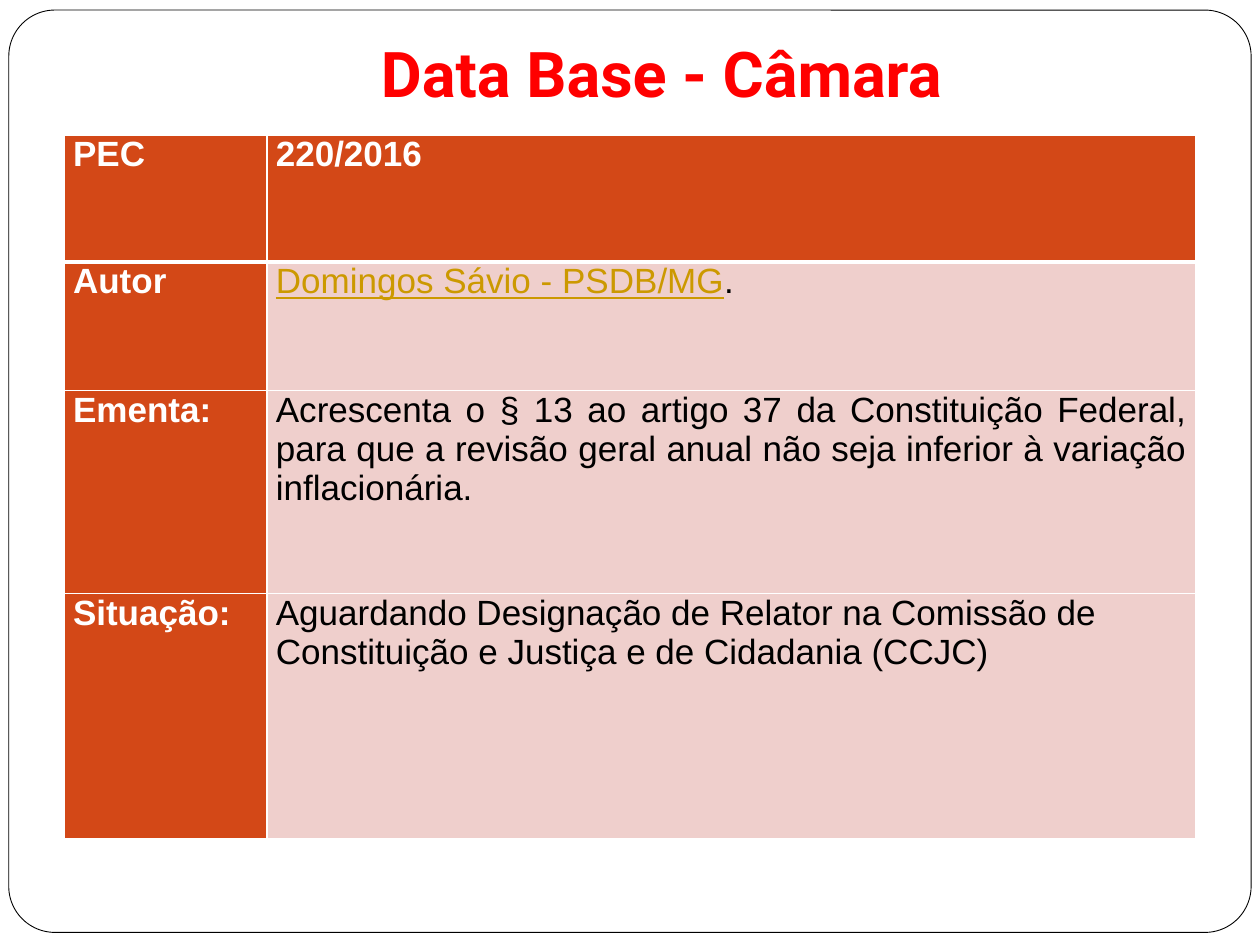
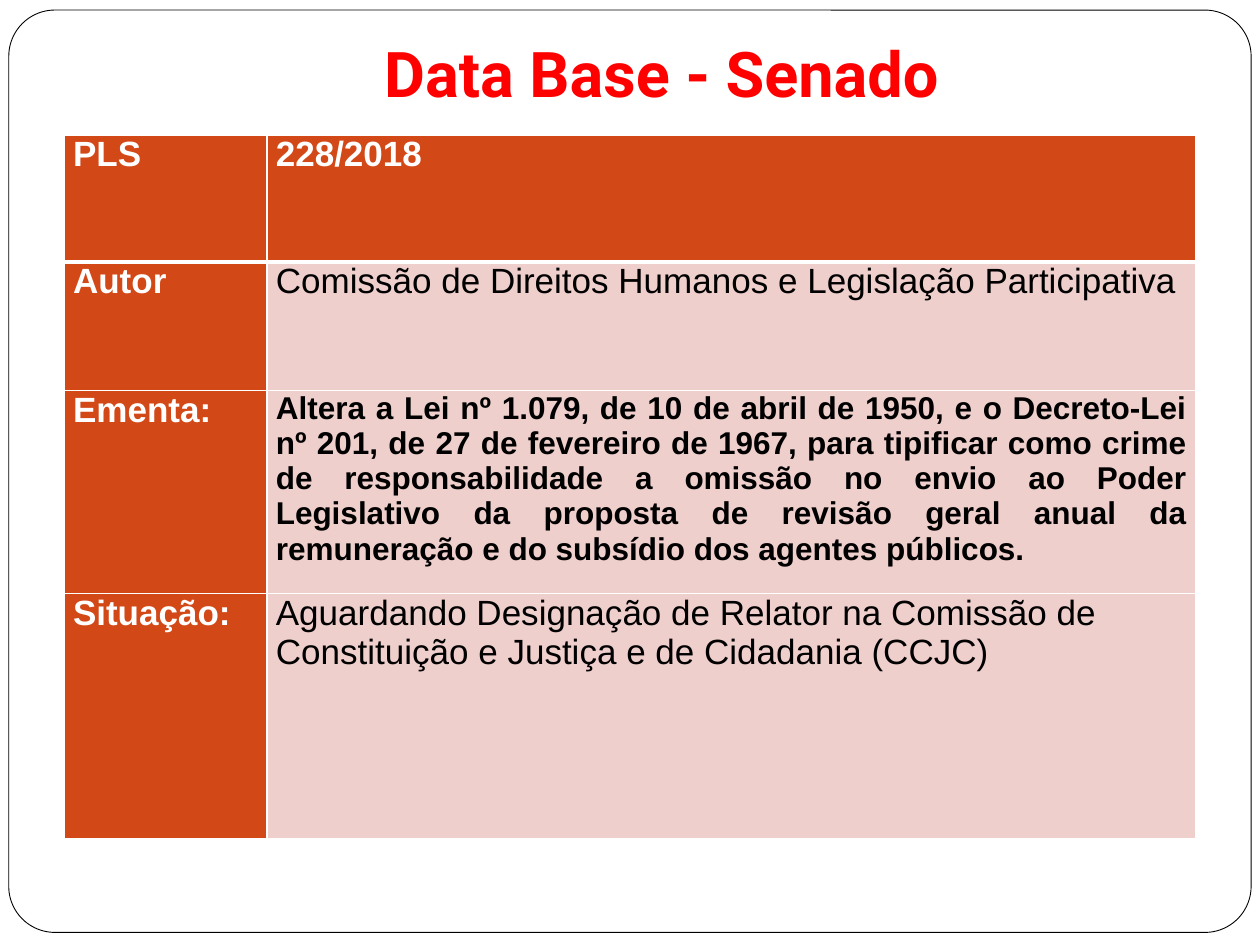
from lxml import etree
from pptx import Presentation
from pptx.dml.color import RGBColor
from pptx.enum.shapes import MSO_SHAPE as Shape
from pptx.enum.text import MSO_ANCHOR as Anchor, PP_ALIGN as Align
from pptx.oxml.ns import qn
from pptx.util import Inches, Pt

COLORS = {
    "white": "FFFFFF",
    "black": "000000",
    "title": "FF0000",
    "label": "D34817",
    "value": "EFCFCC",
    "author": "CC9900",
}
COLUMN_WIDTHS = [1.61, 7.37]
ROW_HEIGHTS = [1.01, 1.02, 1.61, 1.95]
STATUS = ("Aguardando Designação de Relator na Comissão de "
          "Constituição e Justiça e de Cidadania (CCJC)")

# The author is a list of runs; an underlined run takes the author colour.
BILLS = [
    {
        "title": "Data Base - Câmara",
        "kind": "PEC",
        "number": "220/2016",
        "author": [("Domingos Sávio - PSDB/MG", True), (".", False)],
        "summary": "Acrescenta o § 13 ao artigo 37 da Constituição Federal, para que a "
                   "revisão geral anual não seja inferior à variação inflacionária.",
        "summary_size": 20,
        "summary_bold": False,
    },
    {
        "title": "Data Base - Senado",
        "kind": "PLS",
        "number": "228/2018",
        "author": [("Comissão de Direitos Humanos e Legislação Participativa", False)],
        "summary": "Altera a Lei nº 1.079, de 10 de abril de 1950, e o Decreto-Lei nº 201, "
                   "de 27 de fevereiro de 1967, para tipificar como crime de "
                   "responsabilidade a omissão no envio ao Poder Legislativo da proposta "
                   "de revisão geral anual da remuneração e do subsídio dos agentes "
                   "públicos.",
        "summary_size": 18,
        "summary_bold": True,
    },
]


def style_run(run, color, size=20, bold=False, font="Arial"):
    run.font.name = font
    run.font.size = Pt(size)
    run.font.bold = bold
    run.font.color.rgb = RGBColor.from_string(COLORS[color])


def style_cell(cell, row, fill):
    """Set margins, white borders (thick under the header row) and fill."""
    cell.margin_left = cell.margin_right = Inches(0.07)
    cell.margin_top = cell.margin_bottom = 0
    widths = {"lnL": 1, "lnR": 1, "lnT": 3 if row == 1 else 1, "lnB": 3 if row == 0 else 1}
    properties = cell._tc.get_or_add_tcPr()
    for side, width in widths.items():
        border = etree.SubElement(properties, qn(f"a:{side}"), w=str(Pt(width)))
        border_fill = etree.SubElement(border, qn("a:solidFill"))
        etree.SubElement(border_fill, qn("a:srgbClr"), val=COLORS["white"])
    cell.fill.solid()
    cell.fill.fore_color.rgb = RGBColor.from_string(COLORS[fill])


prs = Presentation()
prs.slide_width, prs.slide_height = Inches(10), Inches(7.5)

for bill in BILLS:
    slide = prs.slides.add_slide(prs.slide_layouts[6])

    frame = slide.shapes.add_shape(Shape.ROUNDED_RECTANGLE, Inches(0.07), Inches(0.08),
                                   Inches(9.86), Inches(7.32))
    frame.adjustments[0] = 0.05
    frame.shadow.inherit = False
    frame.fill.solid()
    frame.fill.fore_color.rgb = RGBColor.from_string(COLORS["white"])
    frame.line.color.rgb = RGBColor.from_string(COLORS["black"])
    frame.line.width = Pt(0.5)

    title = slide.shapes.add_textbox(Inches(1), Inches(0.25), Inches(8.5), Inches(0.65))
    title.text_frame.word_wrap = True
    title.text_frame.vertical_anchor = Anchor.MIDDLE
    title.text_frame.margin_top = title.text_frame.margin_bottom = 0
    title.text_frame.text = bill["title"]
    heading = title.text_frame.paragraphs[0]
    heading.alignment = Align.CENTER
    style_run(heading.runs[0], "title", 36, True, "Roboto")

    table = slide.shapes.add_table(len(ROW_HEIGHTS), len(COLUMN_WIDTHS),
                                   Inches(0.51), Inches(1.07),
                                   Inches(sum(COLUMN_WIDTHS)),
                                   Inches(sum(ROW_HEIGHTS))).table
    for column, width in zip(table.columns, COLUMN_WIDTHS):
        column.width = Inches(width)
    for table_row, height in zip(table.rows, ROW_HEIGHTS):
        table_row.height = Inches(height)

    labels = [bill["kind"], "Autor", "Ementa:", "Situação:"]
    values = [[(bill["number"], False)], bill["author"],
              [(bill["summary"], False)], [(STATUS, False)]]
    for row, (label, parts) in enumerate(zip(labels, values)):
        is_header, is_summary = row == 0, row == 2
        label_cell, value_cell = table.cell(row, 0), table.cell(row, 1)
        style_cell(label_cell, row, "label")
        style_cell(value_cell, row, "label" if is_header else "value")

        label_cell.text_frame.text = label
        style_run(label_cell.text_frame.paragraphs[0].runs[0], "white", bold=True)

        paragraph = value_cell.text_frame.paragraphs[0]
        paragraph.alignment = Align.JUSTIFY if is_summary else Align.LEFT
        for text, underlined in parts:
            run = paragraph.add_run()
            run.text = text
            run.font.underline = underlined
            color = "white" if is_header else "author" if underlined else "black"
            style_run(run, color,
                      bill["summary_size"] if is_summary else 20,
                      bill["summary_bold"] if is_summary else is_header)

prs.save("out.pptx")
